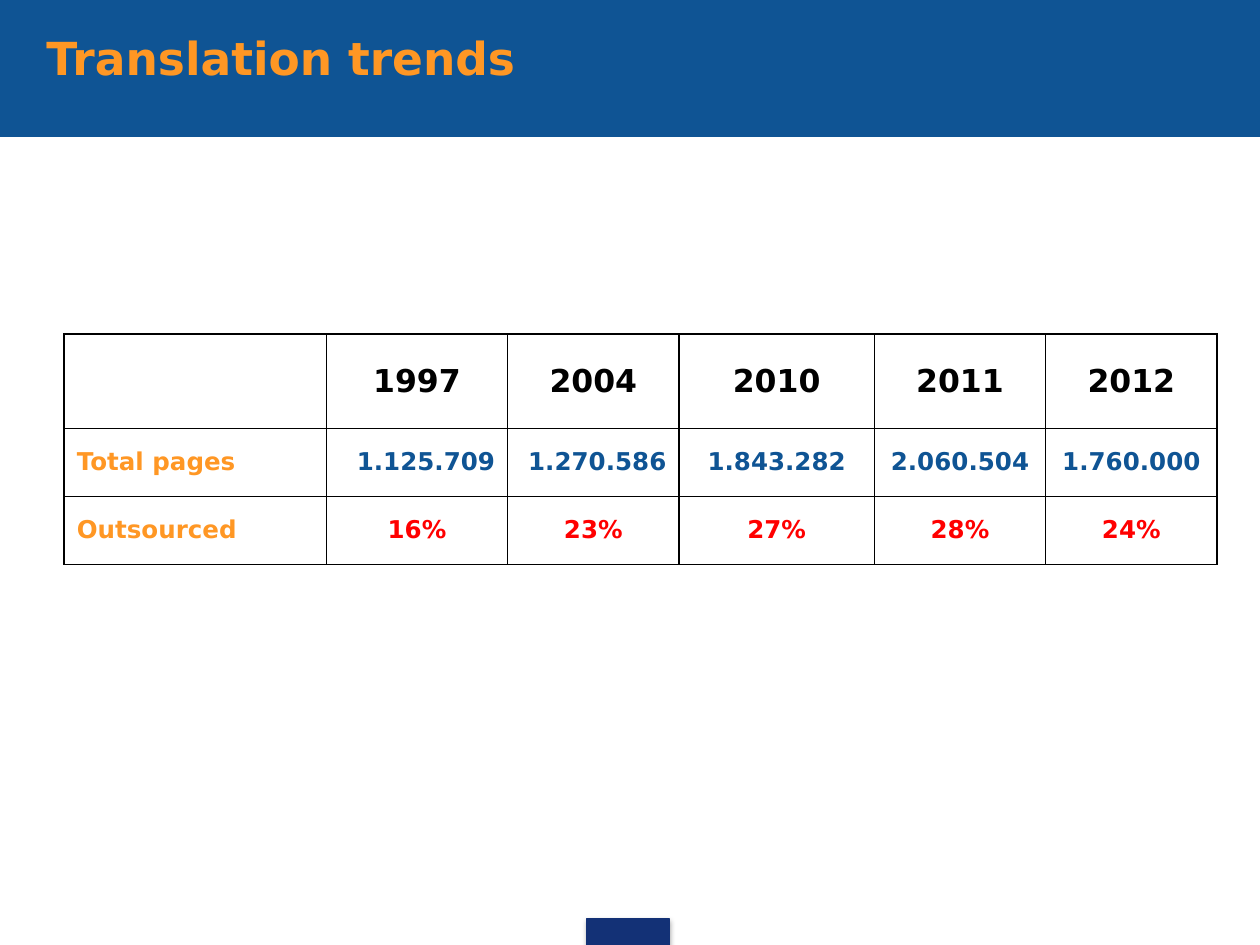
from dataclasses import dataclass

from lxml import etree
from pptx import Presentation
from pptx.dml.color import RGBColor
from pptx.enum.shapes import MSO_SHAPE
from pptx.enum.text import MSO_ANCHOR, PP_ALIGN
from pptx.oxml import parse_xml
from pptx.oxml.ns import nsdecls, qn
from pptx.util import Inches, Pt

RECT = MSO_SHAPE.RECTANGLE
MIDDLE = MSO_ANCHOR.MIDDLE
LEFT, CENTER, RIGHT = PP_ALIGN.LEFT, PP_ALIGN.CENTER, PP_ALIGN.RIGHT


@dataclass(frozen=True)
class Theme:
    font: str = "DejaVu Sans"
    blue: str = "0F5494"
    navy: str = "133176"
    orange: str = "FF9724"
    red: str = "FF0000"
    black: str = "000000"
    title: int = 26
    head: int = 18
    body: int = 14
    rule: float = 1


class Deck:
    def __init__(self, slide, theme):
        self.slide = slide
        self.theme = theme

    def set_text(self, frame, text, size, color, align=LEFT):
        frame.text = text
        for para in frame.paragraphs:
            para.alignment = align
            for run in para.runs:
                run.font.name = self.theme.font
                run.font.size = Pt(size)
                run.font.bold = True
                run.font.color.rgb = RGBColor.from_string(color)

    def block(self, box, color):
        shape = self.slide.shapes.add_shape(RECT, *map(Inches, box))
        shape.shadow.inherit = False
        shape.fill.solid()
        shape.fill.fore_color.rgb = RGBColor.from_string(color)
        shape.line.color.rgb = RGBColor.from_string(color)
        shape.line.width = Pt(0.75)
        return shape

    def shade(self, shape):
        """Give the shape a soft shadow that falls straight down."""
        effects = shape._element.spPr.find(qn("a:effectLst"))
        effects.append(parse_xml(
            f'<a:outerShdw {nsdecls("a")} blurRad="{Pt(3.1)}" dist="{Pt(1.8)}"'
            f' dir="5400000" rotWithShape="0"><a:srgbClr val="{self.theme.black}">'
            '<a:alpha val="35000"/></a:srgbClr></a:outerShdw>'))

    def label(self, box, text, size, color):
        frame = self.slide.shapes.add_textbox(*map(Inches, box)).text_frame
        frame.word_wrap = True
        frame.vertical_anchor = MIDDLE
        self.set_text(frame, text, size, color)

    def border(self, cell):
        props = cell._tc.get_or_add_tcPr()
        for side in ("lnL", "lnR", "lnT", "lnB"):
            line = etree.SubElement(props, qn(f"a:{side}"), w=str(Pt(self.theme.rule)))
            fill = etree.SubElement(line, qn("a:solidFill"))
            etree.SubElement(fill, qn("a:srgbClr"), val=self.theme.black)

    def table(self, left, top, widths, heights, rows, style):
        """Draw a ruled table; style(row, col) gives size, colour and alignment."""
        grid = self.slide.shapes.add_table(
            len(heights), len(widths), Inches(left), Inches(top),
            Inches(sum(widths)), Inches(sum(heights))).table
        grid.first_row = grid.horz_banding = False
        for col, width in zip(grid.columns, widths):
            col.width = Inches(width)
        for row, height in zip(grid.rows, heights):
            row.height = Inches(height)
        for r, row in enumerate(rows):
            for c, text in enumerate(row):
                cell = grid.cell(r, c)
                self.border(cell)
                cell.fill.background()
                cell.vertical_anchor = MIDDLE
                self.set_text(cell.text_frame, text, *style(r, c))


def main():
    theme = Theme()
    show = Presentation()
    show.slide_width, show.slide_height = Inches(10), Inches(7.5)
    deck = Deck(show.slides.add_slide(show.slide_layouts[6]), theme)

    deck.block((0, 0, 10, 1.08), theme.blue)
    deck.shade(deck.block((4.66, 7.29, 0.65, 0.22), theme.navy))
    deck.label((0.27, 0, 4.49, 0.91), "Translation trends", theme.title, theme.orange)

    trends = [
        ["", "1997", "2004", "2010", "2011", "2012"],
        ["Total pages", "1.125.709", "1.270.586", "1.843.282", "2.060.504", "1.760.000"],
        ["Outsourced", "16%", "23%", "27%", "28%", "24%"],
    ]
    colors = [theme.black, theme.blue, theme.red]

    def style(row, col):
        size = theme.body if row else theme.head
        if col == 0:
            return size, theme.orange, LEFT
        align = RIGHT if row == 1 and col <= 2 else CENTER
        return size, colors[row], align

    deck.table(0.51, 2.65, [2.08, 1.44, 1.36, 1.55, 1.36, 1.36],
               [0.75, 0.54, 0.54], trends, style)
    show.save("out.pptx")


if __name__ == "__main__":
    main()
